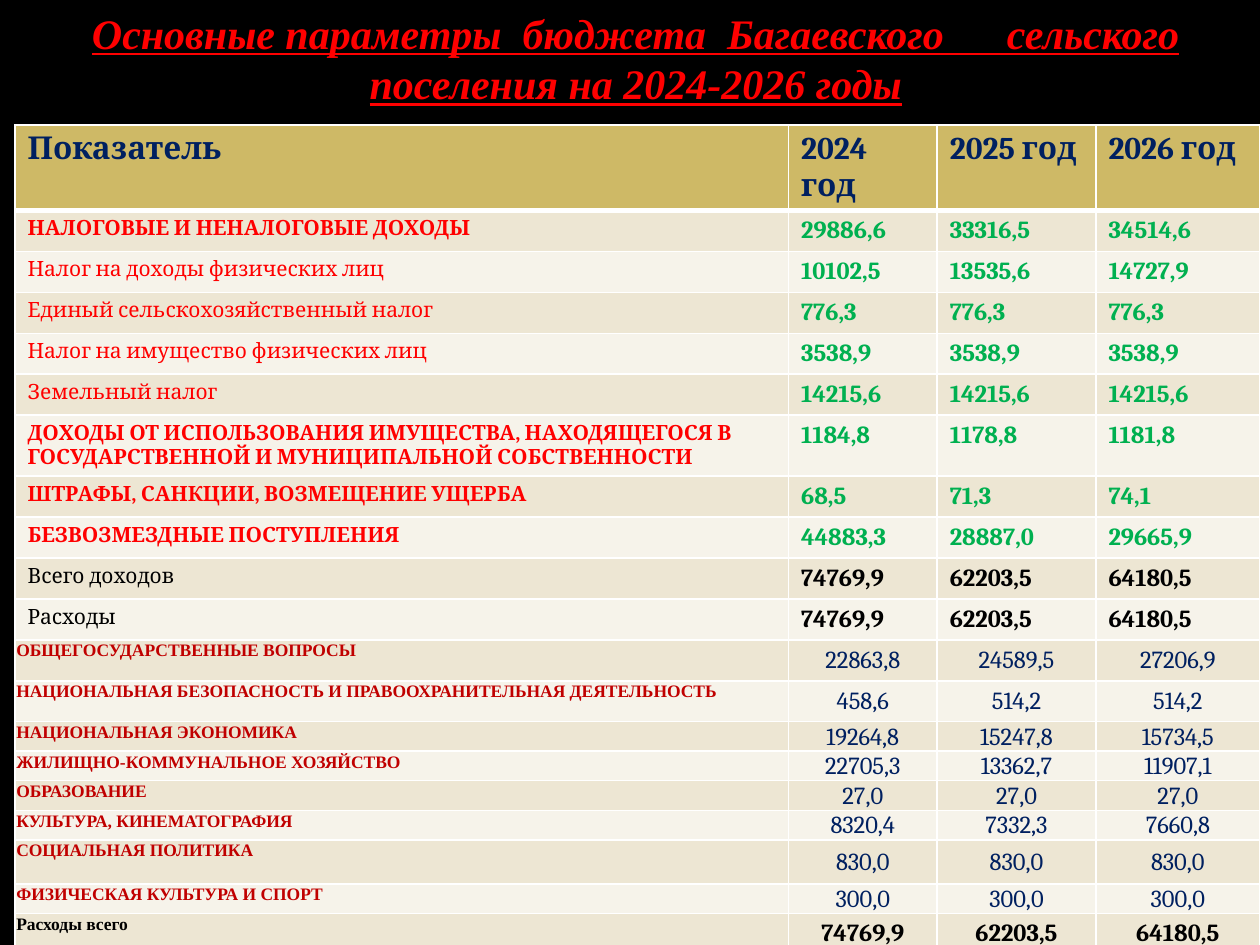
from dataclasses import dataclass

from lxml import etree
from pptx import Presentation
from pptx.dml.color import RGBColor
from pptx.enum.text import MSO_ANCHOR, PP_ALIGN
from pptx.oxml.ns import qn
from pptx.util import Pt

LEFT, CENTER, JUSTIFY = PP_ALIGN.LEFT, PP_ALIGN.CENTER, PP_ALIGN.JUSTIFY
TOP, MIDDLE = MSO_ANCHOR.TOP, MSO_ANCHOR.MIDDLE


@dataclass(frozen=True)
class Theme:
    black: str = "000000"
    white: str = "FFFFFF"
    red: str = "FF0000"
    dark_red: str = "C00000"
    green: str = "00B050"
    navy: str = "002060"
    header_fill: str = "CEB966"
    band_fills: tuple = ("EDE6D3", "F6F3EA")
    serif: str = "Times New Roman"
    body: str = "Cambria"
    title_size: int = 24
    header_size: int = 18
    value_size: int = 14
    label_size: int = 12
    small_size: int = 10


THEME = Theme()


def text_style(size, color, bold=True, name=THEME.body, **extra):
    return {"size": Pt(size), "color": color, "bold": bold, "name": name, **extra}


def cell_style(font, align=LEFT, anchor=TOP, tight=False):
    return {"font": font, "align": align, "anchor": anchor, "tight": tight}


TITLE_FONT = text_style(THEME.title_size, THEME.red, name=THEME.serif, italic=True, underline=True)
HEADER = cell_style(text_style(THEME.header_size, THEME.navy))
GROUP = cell_style(text_style(THEME.label_size, THEME.red))
ITEM = cell_style(text_style(THEME.label_size, THEME.red, bold=False))
SUM = cell_style(text_style(THEME.label_size, THEME.black, bold=False))
SECTION = cell_style(text_style(THEME.small_size, THEME.dark_red, name=THEME.serif), JUSTIFY, tight=True)
SECTION_LEFT = {**SECTION, "align": LEFT}
TOTAL = cell_style(text_style(THEME.small_size, THEME.black, name=THEME.serif), JUSTIFY, tight=True)
INCOME_VALUE = cell_style(text_style(THEME.value_size, THEME.green))
SUM_VALUE = cell_style(text_style(THEME.value_size, THEME.black))
TOTAL_VALUE = {**SUM_VALUE, "align": CENTER}
SPENDING_VALUE = cell_style(text_style(THEME.value_size, THEME.navy, bold=False), CENTER)
TIGHT_VALUE = {**SPENDING_VALUE, "anchor": MIDDLE, "tight": True}

TITLE = "Основные параметры  бюджета  Багаевского      сельского поселения на 2024-2026 годы"
COLUMN_WIDTHS = (442, 85, 90.7, 93.7)
HEADER_HEIGHT, ROW, TALL, LOW, LAST = 48.6, 23.4, 34.9, 16.7, 25.2

# Label, values by year, row height, label style, value style
BUDGET = [
    ("Показатель", ("2024 год", "2025 год", "2026 год"), HEADER_HEIGHT, HEADER, HEADER),
    ("НАЛОГОВЫЕ И НЕНАЛОГОВЫЕ ДОХОДЫ", ("29886,6", "33316,5", "34514,6"), ROW, GROUP, INCOME_VALUE),
    ("Налог на доходы физических лиц", ("10102,5", "13535,6", "14727,9"), ROW, ITEM, INCOME_VALUE),
    ("Единый сельскохозяйственный налог", ("776,3", "776,3", "776,3"), ROW, ITEM, INCOME_VALUE),
    ("Налог на имущество физических лиц", ("3538,9", "3538,9", "3538,9"), ROW, ITEM, INCOME_VALUE),
    ("Земельный налог", ("14215,6", "14215,6", "14215,6"), ROW, ITEM, INCOME_VALUE),
    ("ДОХОДЫ ОТ ИСПОЛЬЗОВАНИЯ ИМУЩЕСТВА, НАХОДЯЩЕГОСЯ В ГОСУДАРСТВЕННОЙ И МУНИЦИПАЛЬНОЙ СОБСТВЕННОСТИ",
     ("1184,8", "1178,8", "1181,8"), TALL, GROUP, INCOME_VALUE),
    ("ШТРАФЫ, САНКЦИИ, ВОЗМЕЩЕНИЕ УЩЕРБА", ("68,5", "71,3", "74,1"), ROW, GROUP, INCOME_VALUE),
    ("БЕЗВОЗМЕЗДНЫЕ ПОСТУПЛЕНИЯ", ("44883,3", "28887,0", "29665,9"), ROW, GROUP, INCOME_VALUE),
    ("Всего доходов", ("74769,9", "62203,5", "64180,5"), ROW, SUM, SUM_VALUE),
    ("Расходы", ("74769,9", "62203,5", "64180,5"), ROW, SUM, SUM_VALUE),
    ("ОБЩЕГОСУДАРСТВЕННЫЕ ВОПРОСЫ", ("22863,8", "24589,5", "27206,9"), ROW, SECTION, SPENDING_VALUE),
    ("НАЦИОНАЛЬНАЯ БЕЗОПАСНОСТЬ И ПРАВООХРАНИТЕЛЬНАЯ ДЕЯТЕЛЬНОСТЬ",
     ("458,6", "514,2", "514,2"), ROW, SECTION_LEFT, SPENDING_VALUE),
    ("НАЦИОНАЛЬНАЯ ЭКОНОМИКА", ("19264,8", "15247,8", "15734,5"), LOW, SECTION, TIGHT_VALUE),
    ("ЖИЛИЩНО-КОММУНАЛЬНОЕ ХОЗЯЙСТВО", ("22705,3", "13362,7", "11907,1"), LOW, SECTION, TIGHT_VALUE),
    ("ОБРАЗОВАНИЕ", ("27,0", "27,0", "27,0"), LOW, SECTION, TIGHT_VALUE),
    ("КУЛЬТУРА, КИНЕМАТОГРАФИЯ", ("8320,4", "7332,3", "7660,8"), LOW, SECTION, TIGHT_VALUE),
    ("СОЦИАЛЬНАЯ ПОЛИТИКА", ("830,0", "830,0", "830,0"), LAST, SECTION, TIGHT_VALUE),
    ("ФИЗИЧЕСКАЯ КУЛЬТУРА И СПОРТ", ("300,0", "300,0", "300,0"), LOW, SECTION, TIGHT_VALUE),
    ("Расходы всего", ("74769,9", "62203,5", "64180,5"), LAST, TOTAL, TOTAL_VALUE),
]


class PageBuilder:
    def __init__(self, deck, theme):
        self.theme = theme
        self.page = deck.slides.add_slide(deck.slide_layouts[5])
        self.fill(self.page.background.fill, theme.black)

    def fill(self, target, color):
        target.solid()
        target.fore_color.rgb = RGBColor.from_string(color)

    def add_text(self, para, text, font, align):
        para.alignment = align
        span = para.add_run()
        span.text = text
        for key, value in font.items():
            if key == "color":
                span.font.color.rgb = RGBColor.from_string(value)
            else:
                setattr(span.font, key, value)

    def title(self, text, left, top, width, height):
        box = self.page.shapes.title
        box.left, box.top, box.width, box.height = map(Pt, (left, top, width, height))
        frame = box.text_frame
        frame.word_wrap = True
        frame.vertical_anchor = MIDDLE
        self.add_text(frame.paragraphs[0], text, TITLE_FONT, CENTER)

    def borders(self, cell, bottom_width):
        """Insert the edge lines before the fill, as the schema requires."""
        properties = cell._tc.get_or_add_tcPr()
        widths = {"a:lnL": 1, "a:lnR": 1, "a:lnT": 1, "a:lnB": bottom_width}
        for position, (tag, width) in enumerate(widths.items()):
            line = etree.Element(qn(tag), w=str(Pt(width)))
            solid = etree.SubElement(line, qn("a:solidFill"))
            etree.SubElement(solid, qn("a:srgbClr"), val=self.theme.white)
            properties.insert(position, line)

    def cell(self, cell, text, style, color, bottom_width):
        cell.vertical_anchor = style["anchor"]
        if style["tight"]:
            margins = {"margin_left": 0.75, "margin_top": 0.75, "margin_right": 0.75, "margin_bottom": 0}
            for key, value in margins.items():
                setattr(cell, key, Pt(value))
        self.add_text(cell.text_frame.paragraphs[0], text, style["font"], style["align"])
        self.fill(cell.fill, color)
        self.borders(cell, bottom_width)

    def table(self, records, widths, left, top):
        height = sum(record[2] for record in records)
        table = self.page.shapes.add_table(
            len(records), len(widths), Pt(left), Pt(top), Pt(sum(widths)), Pt(height)).table
        for column, width in zip(table.columns, widths):
            column.width = Pt(width)
        for index, (label, values, height, label_style, value_style) in enumerate(records):
            table.rows[index].height = Pt(height)
            header = index == 0
            color = self.theme.header_fill if header else self.theme.band_fills[(index - 1) % 2]
            for column, text in enumerate((label, *values)):
                style = value_style if column else label_style
                self.cell(table.cell(index, column), text, style, color, 3 if header else 1)


def main():
    deck = Presentation()
    deck.slide_width, deck.slide_height = Pt(720), Pt(540)
    builder = PageBuilder(deck, THEME)
    builder.title(TITLE, 42.5, 0, 641.5, 66.2)
    builder.table(BUDGET, COLUMN_WIDTHS, 8.6, 71.5)
    deck.save("out.pptx")


if __name__ == "__main__":
    main()
